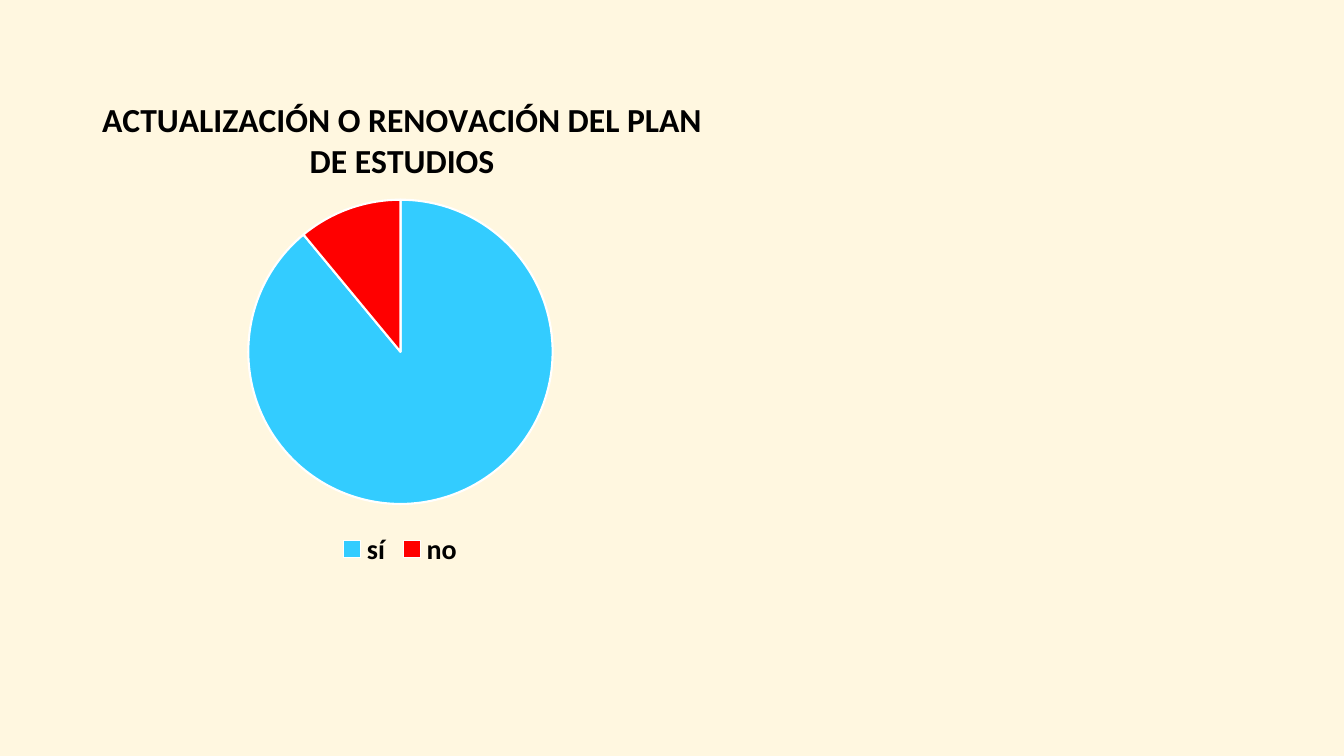
from lxml.etree import SubElement
from pptx import Presentation
from pptx.chart.data import CategoryChartData as ChartData
from pptx.dml.color import RGBColor
from pptx.enum.chart import XL_CHART_TYPE as ChartType, XL_LEGEND_POSITION as LegendPosition
from pptx.oxml.ns import qn
from pptx.util import Inches, Pt

CREAM = RGBColor(0xFF, 0xF7, 0xE0)
SKY = RGBColor(0x33, 0xCC, 0xFF)
RED = RGBColor(0xFF, 0x00, 0x00)
WHITE = RGBColor(0xFF, 0xFF, 0xFF)
BLACK = RGBColor(0x00, 0x00, 0x00)


class SlideBuilder:
    """Holds the style and the current slide; lengths are shares of the slide."""

    font_name = "Calibri"

    def __init__(self, deck):
        self.width, self.height = deck.slide_width, deck.slide_height
        self.page = deck.slides.add_slide(deck.slide_layouts[6])

    def background(self, color):
        fill = self.page.background.fill
        fill.solid()
        fill.fore_color.rgb = color

    def style(self, font, size, bold=True):
        font.name, font.size, font.bold = self.font_name, Pt(size), bold
        font.color.rgb = BLACK

    def place(self, element, **shares):
        """Fix a chart part at shares of the chart's own size."""
        layout = element.get_or_add_layout() if hasattr(element, "get_or_add_layout") else element.find(qn("c:layout"))
        if layout is None:
            layout = SubElement(element, qn("c:layout"))
            element.insert(0, layout)
        for child in list(layout):
            layout.remove(child)
        manual = SubElement(layout, qn("c:manualLayout"))
        if "w" in shares:
            SubElement(manual, qn("c:layoutTarget")).set("val", "inner")
        for side in ("x", "y"):
            SubElement(manual, qn(f"c:{side}Mode")).set("val", "edge")
        for side, share in shares.items():
            SubElement(manual, qn(f"c:{side}")).set("val", str(share))

    def pie(self, title, slices, left, top, width, height):
        data = ChartData()
        data.categories = [name for name, value, color in slices]
        data.add_series("Series 1", [value for name, value, color in slices])
        chart = self.page.shapes.add_chart(
            ChartType.PIE, int(left * self.width), int(top * self.height),
            int(width * self.width), int(height * self.height), data).chart
        self.style(chart.font, 10, bold=False)

        # Title
        chart.has_title = True
        chart.chart_title.include_in_layout = False
        para = chart.chart_title.text_frame.paragraphs[0]
        para.text = title
        self.style(para.font, 24)

        # Slices
        plot = chart.plots[0]
        plot.vary_by_categories = True
        for index, (name, value, color) in enumerate(slices):
            form = plot.series[0].points[index].format
            form.fill.solid()
            form.fill.fore_color.rgb = color
            form.line.color.rgb = WHITE
            form.line.width = Pt(1.5)
        self.place(plot._element.getparent(), x=0.31, y=0.26, w=0.38, h=0.61)

        # Legend
        chart.has_legend = True
        chart.legend.position = LegendPosition.BOTTOM
        chart.legend.include_in_layout = False
        self.style(chart.legend.font, 20)
        return chart


def main():
    deck = Presentation()
    deck.slide_width, deck.slide_height = Inches(13.33), Inches(7.5)

    builder = SlideBuilder(deck)
    builder.background(CREAM)
    chart = builder.pie(
        "ACTUALIZACIÓN O RENOVACIÓN DEL PLAN DE ESTUDIOS",
        [("sí", 89, SKY), ("no", 11, RED)],
        left=0, top=0.087, width=0.596, height=0.67)
    builder.place(chart.chart_title._element, x=0.12, y=0.05)

    deck.save("out.pptx")


if __name__ == "__main__":
    main()
